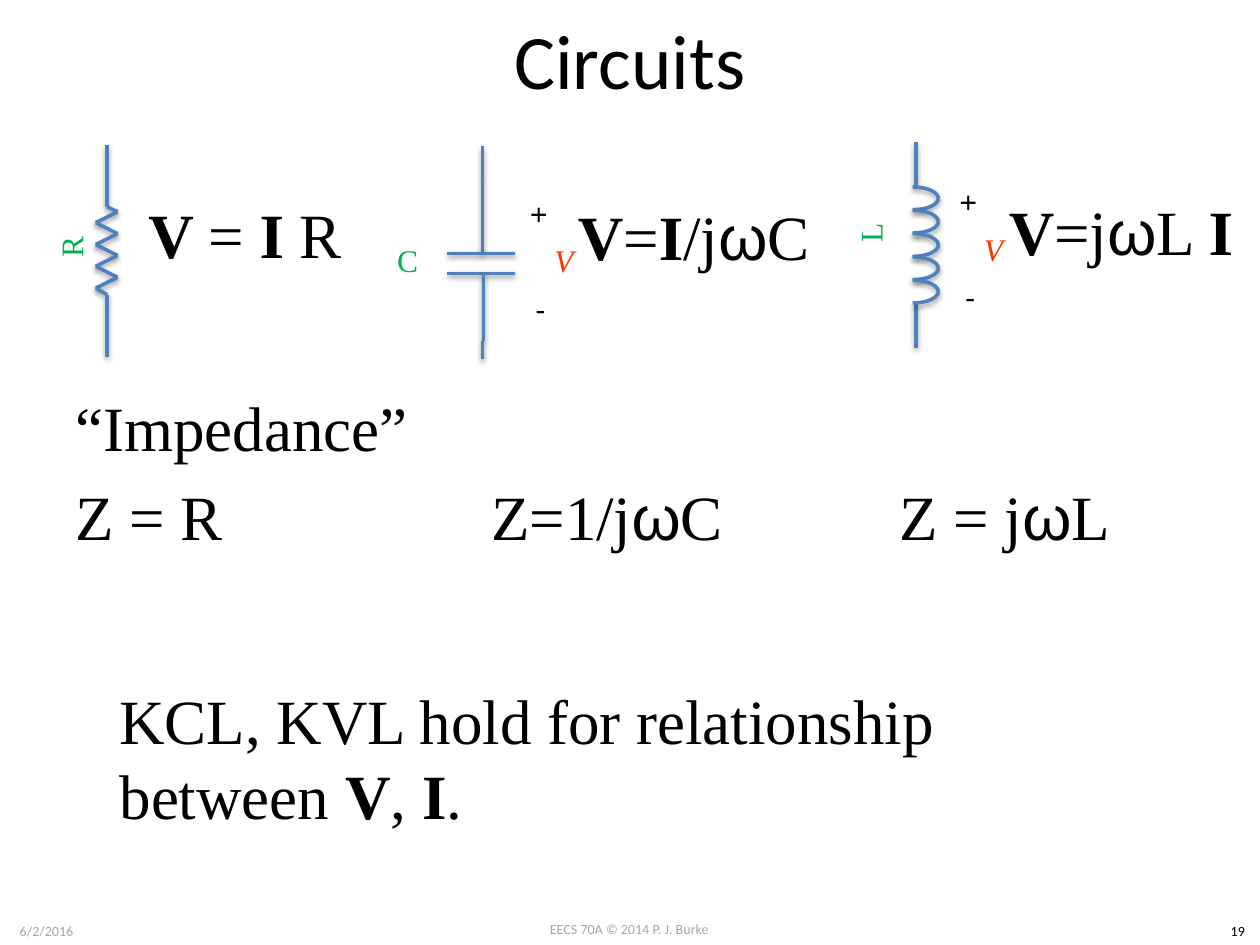
import itertools
import pptx
import pptx.dml.color
import pptx.enum.shapes
import pptx.enum.text
import pptx.oxml
import pptx.oxml.ns
import pptx.util

Cm = pptx.util.Cm
ALIGN = pptx.enum.text.PP_ALIGN
ANCHOR = pptx.enum.text.MSO_ANCHOR
HUES = {"blue": "4F81BD", "black": "000000", "grey": "A6A6A6",
        "green": "00B050", "red": "FF3300"}
SERIF = "Times New Roman"
SHADE = (
    "<a:effectLst %s><a:outerShdw blurRad='40000' dist='20000' dir='5400000' "
    "rotWithShape='0'><a:srgbClr val='000000'><a:alpha val='38000'/></a:srgbClr>"
    "</a:outerShdw></a:effectLst>" % pptx.oxml.ns.nsdecls("a"))

deck = pptx.Presentation()
deck.slide_width, deck.slide_height = Cm(25.4), Cm(19.05)
slide = deck.slides.add_slide(deck.slide_layouts[6])


def text(words, x, y, w, h, size=36, font=SERIF, hue="black", align=ALIGN.LEFT,
         anchor=ANCHOR.TOP, turn=0, wrap=True, italic=False):
    """Add a text box; words between asterisks are bold, omega is in Arial."""
    box = slide.shapes.add_textbox(Cm(x), Cm(y), Cm(w), Cm(h))
    box.rotation = turn
    frame = box.text_frame
    frame.word_wrap = wrap
    frame.vertical_anchor = anchor
    para = frame.paragraphs[0]
    para.alignment = align
    for i, part in enumerate(words.split("*")):
        for greek, chars in itertools.groupby(part, lambda c: c == "ω"):
            run = para.add_run()
            run.text = "".join(chars)
            run.font.name = "Arial" if greek else font
            run.font.size = pptx.util.Pt(size)
            run.font.bold = i % 2 == 1
            run.font.italic = italic
            run.font.color.rgb = pptx.dml.color.RGBColor.from_string(HUES[hue])


def ink(shape):
    """Give a wire its blue line and soft shadow."""
    shape.line.color.rgb = pptx.dml.color.RGBColor.from_string(HUES["blue"])
    shape.line.width = pptx.util.Pt(2)
    shape._element.spPr.append(pptx.oxml.parse_xml(SHADE))


# Footer and title
foot = dict(size=8, font="Calibri", align=ALIGN.CENTER)
text("EECS 70A © 2014 P. J. Burke", 9.73, 18.44, 5.92, 0.61, hue="grey", **foot)
text("6/2/2016", 0, 18.47, 1.88, 0.61, hue="grey", **foot)
text("19", 24.51, 18.47, 0.89, 0.61, **foot)
text("Circuits", 1.27, 0, 22.86, 2.36, size=44, font="Calibri",
     align=ALIGN.CENTER, anchor=ANCHOR.MIDDLE)

# Wires: each path is a chain of straight lines
zigzag = [(1.93 if i % 2 else 2.37, 4.27 + 0.22 * i) for i in range(8)]
paths = [
    [(2.16, 2.92), (2.16, 4.17), *zigzag, (2.16, 5.94), (2.16, 7.19)],  # resistor
    [(9.73, 2.95), (9.73, 3.51), (9.73, 5.11)],  # capacitor
    [(9.02, 5.11), (10.39, 5.11)],
    [(9.02, 5.51), (10.39, 5.51)],
    [(9.75, 5.51), (9.75, 6.88)],
    [(9.73, 6.88), (9.73, 7.24)],
    [(18.47, 2.87), (18.47, 3.76)],  # inductor
    [(18.47, 6.12), (18.47, 7.01)],
]
for path in paths:
    for (x1, y1), (x2, y2) in zip(path, path[1:]):
        ink(slide.shapes.add_connector(pptx.enum.shapes.MSO_CONNECTOR.STRAIGHT,
                                       Cm(x1), Cm(y1), Cm(x2), Cm(y2)))

# Inductor coil: an upper and a lower quarter arc per turn
for i in range(5):
    for lower in (False, True):
        arc = slide.shapes.add_shape(pptx.enum.shapes.MSO_SHAPE.ARC, Cm(17.88),
                                     Cm(3.77 + 0.47 * i), Cm(1.04), Cm(0.46))
        arc.fill.background()
        ink(arc)
        if lower:
            arc._element.spPr.xfrm.set("flipV", "1")

# Part letters
mid = dict(size=18, align=ALIGN.CENTER, anchor=ANCHOR.MIDDLE)
for name, x, y, turn in [("R", -0.08, 4.06, 270), ("C", 6.71, 4.32, 0),
                         ("L", 16.03, 3.76, 270)]:
    text(name, x, y, 3.02, 1.85, hue="green", turn=turn, **mid)

# Voltage marks
sign = dict(size=18, font="Calibri", wrap=False)
for x, y in [(10.39, 4.47), (19.05, 4.24)]:
    text("+", x + 0.1, y - 0.63, 0.84, 1.02, turn=90, **sign)
    text("-", x + 0.16, y + 1.25, 0.71, 1.02, **sign)
    text("V", x, y, 1.96, 1.55, hue="red", italic=True, **mid)

# Equations
for words, x, y, w in [
    ("*V *= *I *R", 2.74, 3.81, 4.95),
    ("*V*=*I*/jωC", 11.4, 3.86, 5.18),
    ("*V*=jωL *I*", 20.09, 3.76, 5.18),
    ("“Impedance”", 1.27, 7.7, 7.75),
    ("Z = R", 1.27, 9.5, 4.8),
    ("Z=1/jωC", 9.65, 9.5, 5.38),
    ("Z = jωL", 17.88, 9.5, 5.38),
]:
    text(words, x, y, w, 1.8)
text("KCL, KVL hold for relationship between *V*, *I*.", 2.16, 13.61, 19.76, 3.33)

deck.save("out.pptx")
